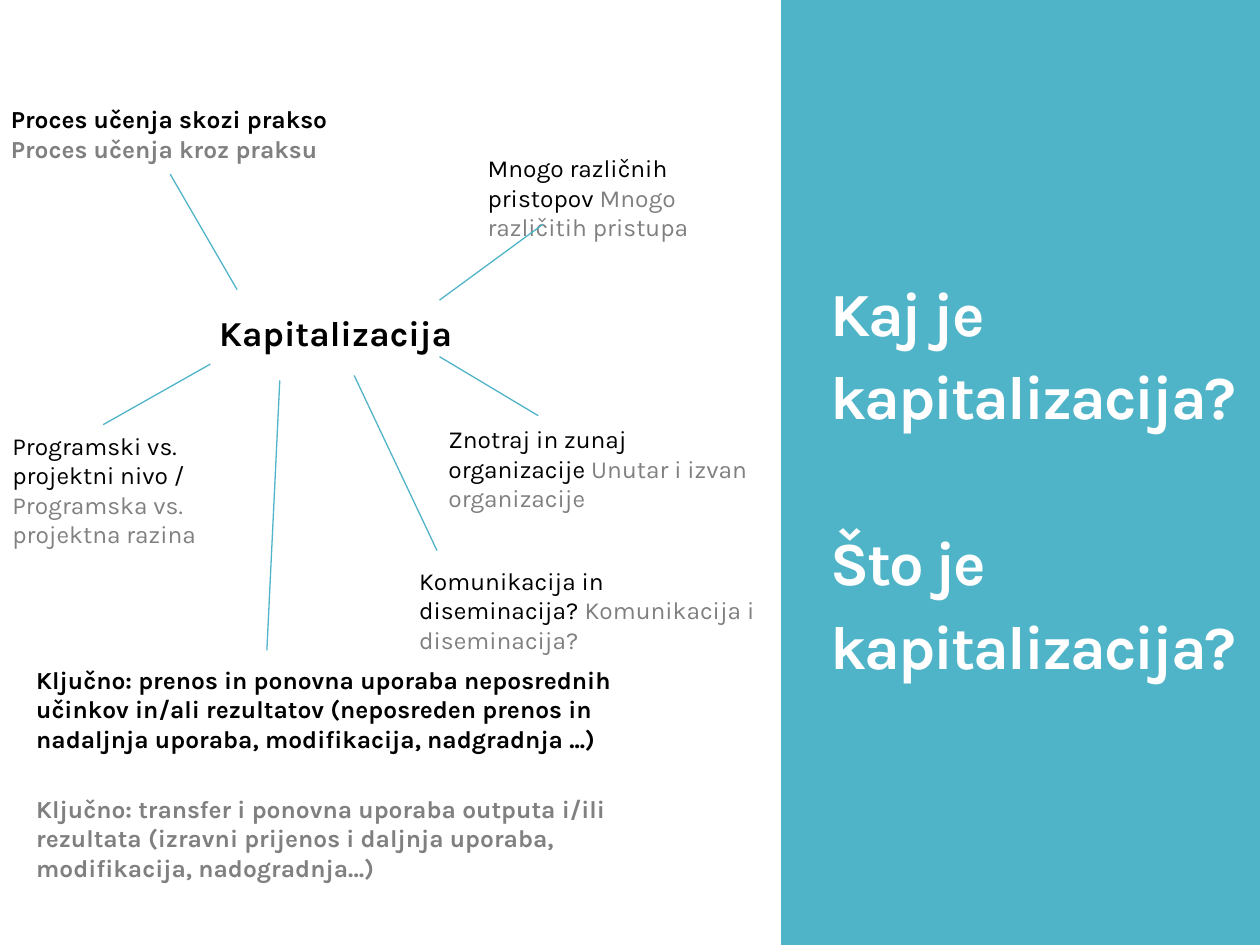
"""Build the slide that asks what capitalisation is, in Slovene and Croatian."""
from dataclasses import dataclass

from lxml.etree import SubElement
from pptx import Presentation
from pptx.dml.color import RGBColor as Rgb
from pptx.enum.shapes import MSO_CONNECTOR as Conn, MSO_SHAPE as Kind
from pptx.enum.text import MSO_ANCHOR as Anchor, MSO_AUTO_SIZE as Fit, PP_ALIGN as Align
from pptx.oxml.ns import qn
from pptx.util import Cm, Pt


@dataclass(frozen=True)
class Theme:
    """Hold the colours, font and type sizes."""
    teal: Rgb = Rgb(0x50, 0xB4, 0xC8)
    white: Rgb = Rgb(255, 255, 255)
    black: Rgb = Rgb(0, 0, 0)
    grey: Rgb = Rgb(128, 128, 128)
    face: str = "Karla"
    head: Pt = Pt(35)
    hub: Pt = Pt(20)
    body: Pt = Pt(14)
    rule: Pt = Pt(0.75)


THEME = Theme()

NOTES = [
    ((0, 8.56, 5.82, 2.06), False,
     "Programski vs. projektni nivo / ", "Programska vs. projektna razina"),
    ((9.58, 2.97, 6.2, 1.45), False,
     "Mnogo različnih pristopov ", "Mnogo različitih pristupa"),
    ((-0.03, 1.98, 8.1, 1.45), True,
     "Proces učenja skozi prakso ", "Proces učenja kroz praksu"),
    ((8.2, 11.28, 7.49, 1.45), False,
     "Komunikacija in diseminacija? ", "Komunikacija i diseminacija?"),
    ((8.79, 8.43, 6.83, 1.45), False,
     "Znotraj in zunaj organizacije ", "Unutar i izvan organizacije"),
]

SPOKES = [
    (3.43, 3.51, 4.78, 5.84),
    (7.14, 7.57, 8.81, 11.1),
    (2.08, 8.56, 4.24, 7.34),
    (10.95, 4.52, 8.86, 6.05),
    (5.38, 13.11, 5.64, 7.67),
    (10.85, 8.38, 8.86, 7.19),
]

KEYS = [
    ("Ključno: prenos in ponovna uporaba neposrednih učinkov in/ali rezultatov "
     "(neposreden prenos in nadaljnja uporaba, modifikacija, nadgradnja ...)",
     THEME.black),
    ("Ključno: transfer i ponovna uporaba outputa i/ili rezultata "
     "(izravni prijenos i daljnja uporaba, modifikacija, nadogradnja…)",
     THEME.grey),
]


def style(para, size, bold, color=None):
    """Set the font of a whole paragraph."""
    font = para.font
    font.name, font.size, font.bold = THEME.face, size, bold
    if color is not None:
        font.color.rgb = color


def add_panel(slide):
    """Draw the coloured panel behind the title."""
    panel = slide.shapes.add_shape(Kind.RECTANGLE, Cm(15.75), 0, Cm(9.65), Cm(19.05))
    panel.shadow.inherit = False
    panel.fill.solid()
    panel.fill.fore_color.rgb = THEME.teal
    panel.line.fill.background()


def set_title(slide, lines):
    """Place the title and write one paragraph per language."""
    title = slide.shapes.title
    title.left, title.top, title.width, title.height = map(Cm, (16.48, 1.78, 8.86, 15.52))
    frame = title.text_frame
    frame.auto_size, frame.word_wrap = Fit.NONE, True
    frame.vertical_anchor = Anchor.MIDDLE
    frame.text = "\n".join(lines)
    for i, para in enumerate(frame.paragraphs):
        para.alignment, para.line_spacing = Align.LEFT, 1.14
        para.space_before = Pt(47 if i else 0)
        style(para, THEME.head, True, THEME.white)
        for run in para.runs:
            run.font._element.set("spc", "-120")


def add_box(slide, place):
    """Add a wrapping text box and return its frame."""
    frame = slide.shapes.add_textbox(*map(Cm, place)).text_frame
    frame.word_wrap, frame.auto_size = True, Fit.SHAPE_TO_FIT_TEXT
    return frame


def add_hub(slide, text):
    """Add the central term of the map."""
    frame = add_box(slide, (3.61, 6.1, 6.45, 1.09))
    frame.margin_left = Cm(0.81)
    frame.text = text
    para = frame.paragraphs[0]
    para.alignment, para.line_spacing = Align.JUSTIFY, 1.07
    para.space_after = Pt(3.5)
    style(para, THEME.hub, True, THEME.black)


def add_note(slide, place, bold, first, second):
    """Add a note in black with its translation in grey."""
    para = add_box(slide, place).paragraphs[0]
    para.space_after = Pt(3.3)
    style(para, THEME.body, bold)
    for text, color in ((first, THEME.black), (second, THEME.grey)):
        run = para.add_run()
        run.text = text
        run.font.color.rgb = color


def add_keys(slide):
    """Add the key message in both languages."""
    frame = add_box(slide, (0.48, 13.28, 13.31, 5.36))
    frame.text = "\n".join(text for text, _ in KEYS)
    for i, (para, (_, color)) in enumerate(zip(frame.paragraphs, KEYS)):
        para.space_before, para.space_after = Pt(20 if i else 0), Pt(3.3)
        style(para, THEME.body, True, color)


def add_spoke(slide, ends):
    """Draw a thin line between the hub and a note."""
    spoke = slide.shapes.add_connector(Conn.STRAIGHT, *map(Cm, ends))
    spoke.line.color.rgb, spoke.line.width = THEME.teal, THEME.rule
    SubElement(spoke._element.spPr, qn("a:effectLst"))


def main():
    """Build and save the slide."""
    deck = Presentation()
    deck.slide_width, deck.slide_height = Cm(25.4), Cm(19.05)
    slide = deck.slides.add_slide(deck.slide_layouts[5])
    add_panel(slide)
    title = slide.shapes.title._element
    title.getparent().append(title)
    set_title(slide, ["Kaj je kapitalizacija?", "Što je kapitalizacija?"])
    add_hub(slide, "Kapitalizacija")
    for note in NOTES:
        add_note(slide, *note)
    for ends in SPOKES:
        add_spoke(slide, ends)
    add_keys(slide)
    deck.save("out.pptx")


if __name__ == "__main__":
    main()
